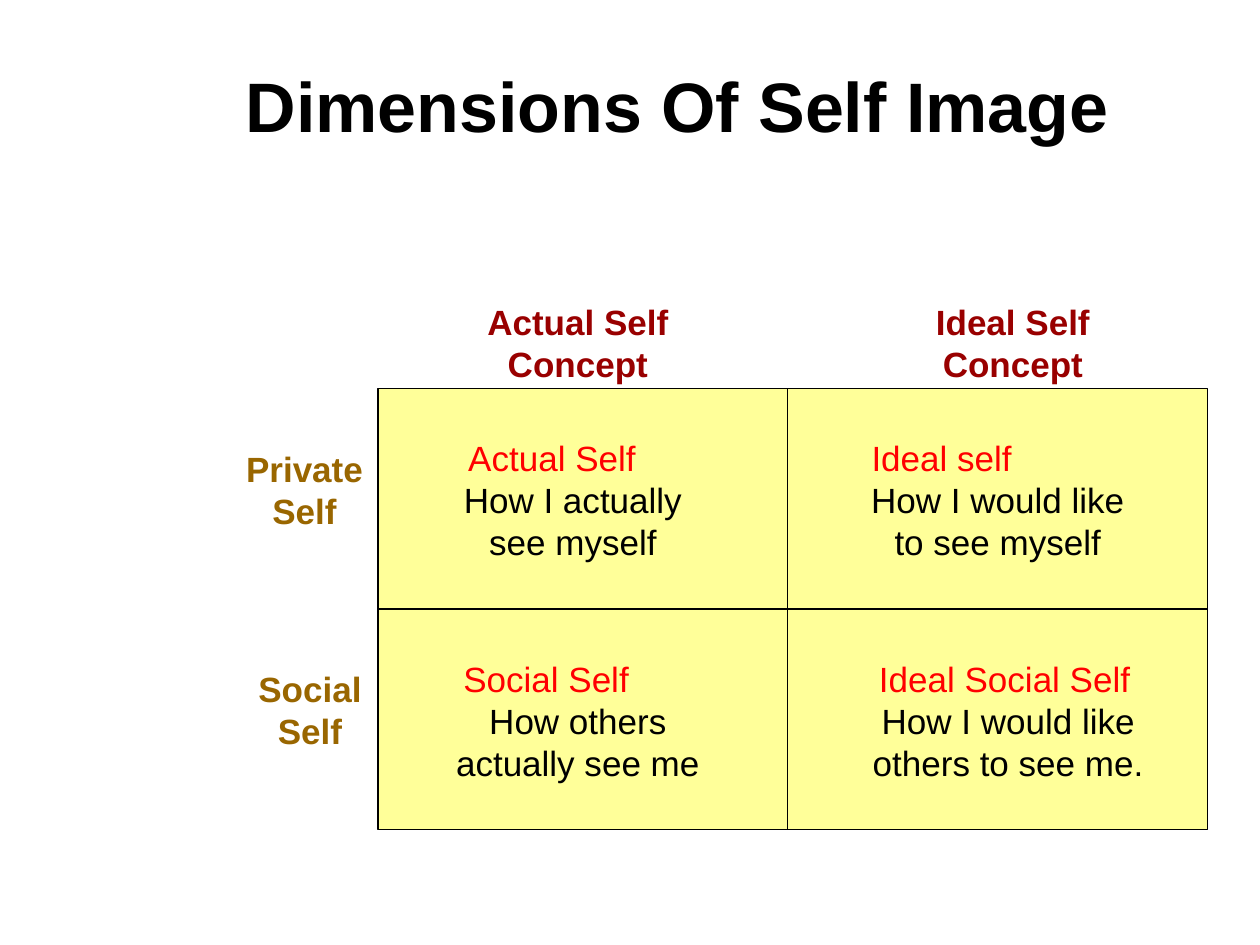
from lxml import etree
from pptx import Presentation
from pptx.dml.color import RGBColor
from pptx.enum.shapes import MSO_CONNECTOR, MSO_SHAPE
from pptx.enum.text import MSO_ANCHOR, MSO_AUTO_SIZE, PP_ALIGN
from pptx.oxml.ns import qn
from pptx.util import Cm, Pt

BLACK = RGBColor(0x00, 0x00, 0x00)
YELLOW = RGBColor(0xFF, 0xFF, 0x99)
MAROON = RGBColor(0x99, 0x00, 0x00)
BROWN = RGBColor(0x99, 0x66, 0x00)
RED = RGBColor(0xFF, 0x00, 0x00)
FONT = "Arial"

# Content: lengths in cm
TITLE = "Dimensions Of Self Image"
GRID = (7.62, 7.83, 16.72, 8.89)  # left, top, width, height
DIVIDER_X = 15.88
COLUMN_TOP, LABEL_HEIGHT = 5.93, 1.96
COLUMNS = [("Actual Self Concept", 8.69, 5.92),
           ("Ideal Self Concept", 17.98, 4.88)]  # text, left, width
ROW_LABEL_OFFSET, CELL_OFFSET, CELL_HEIGHT = 1.06, 0.85, 2.82
ROWS = [
    # label, left, width, cells of (heading, text, left, width, heading indent)
    ("Private Self", 4.45, 3.38, [
        ("Actual Self", "How I actually see myself", 8.69, 5.72, 0.5),
        ("Ideal self", "How I would like to see myself", 16.94, 6.35, 0.38)]),
    ("Social Self", 4.88, 2.74, [
        ("Social Self", "How others actually see me", 8.69, 5.92, 0.4),
        ("Ideal Social Self", "How I would like others to see me.", 17.15, 6.35, 0.32)]),
]


def add_run(p, text, size, color, bold=False):
    r = p.add_run()
    r.text = text
    r.font.name, r.font.size = FONT, Pt(size)
    r.font.bold, r.font.color.rgb = bold, color


def add_text_frame(s, left, top, width, height):
    sp = s.shapes.add_textbox(Cm(left), Cm(top), Cm(width), Cm(height))
    tf = sp.text_frame
    tf.word_wrap = True
    tf.auto_size = MSO_AUTO_SIZE.SHAPE_TO_FIT_TEXT
    return tf


def add_label(s, text, left, top, width, color):
    p = add_text_frame(s, left, top, width, LABEL_HEIGHT).paragraphs[0]
    p.alignment = PP_ALIGN.CENTER
    add_run(p, text, 20, color, bold=True)


def add_cell(s, heading, text, left, top, width, indent):
    tf = add_text_frame(s, left, top, width, CELL_HEIGHT)
    p = tf.paragraphs[0]
    p.alignment = PP_ALIGN.LEFT
    p._p.get_or_add_pPr().set("marL", str(Cm(indent)))
    add_run(p, heading, 20, RED)
    p = tf.add_paragraph()
    p.alignment = PP_ALIGN.CENTER
    add_run(p, text, 20, BLACK)


def add_line(s, x1, y1, x2, y2):
    line = s.shapes.add_connector(MSO_CONNECTOR.STRAIGHT, Cm(x1), Cm(y1), Cm(x2), Cm(y2))
    line.line.color.rgb, line.line.width = BLACK, Pt(0.75)
    etree.SubElement(line._element.spPr, qn("a:effectLst"))
    return line


def main():
    prs = Presentation()
    prs.slide_width, prs.slide_height = Cm(25.4), Cm(19.05)
    s = prs.slides.add_slide(prs.slide_layouts[5])

    # Title
    title = s.shapes.title
    title.left, title.top, title.width, title.height = Cm(2.96), Cm(0.42), Cm(21.38), Cm(3.38)
    title.text_frame.vertical_anchor = MSO_ANCHOR.MIDDLE
    p = title.text_frame.paragraphs[0]
    p.alignment = PP_ALIGN.CENTER
    add_run(p, TITLE, 40, BLACK, bold=True)

    # Matrix with its dividers
    left, top, width, height = GRID
    matrix = s.shapes.add_shape(MSO_SHAPE.RECTANGLE, *map(Cm, GRID))
    matrix.shadow.inherit = False
    matrix.fill.solid()
    matrix.fill.fore_color.rgb = YELLOW
    matrix.line.color.rgb, matrix.line.width = BLACK, Pt(0.75)
    middle = top + height / 2
    row_divider = add_line(s, left, middle, left + width, middle)
    row_divider.begin_connect(matrix, 1)
    row_divider.end_connect(matrix, 3)
    add_line(s, DIVIDER_X, top, DIVIDER_X, top + height)

    # Column labels
    for text, x, w in COLUMNS:
        add_label(s, text, x, COLUMN_TOP, w, MAROON)

    # Row labels and cells
    for i, (label, x, w, cells) in enumerate(ROWS):
        row_top = top + i * height / len(ROWS)
        add_label(s, label, x, row_top + ROW_LABEL_OFFSET, w, BROWN)
        for heading, text, cell_x, cell_w, indent in cells:
            add_cell(s, heading, text, cell_x, row_top + CELL_OFFSET, cell_w, indent)

    prs.save("out.pptx")


if __name__ == "__main__":
    main()
